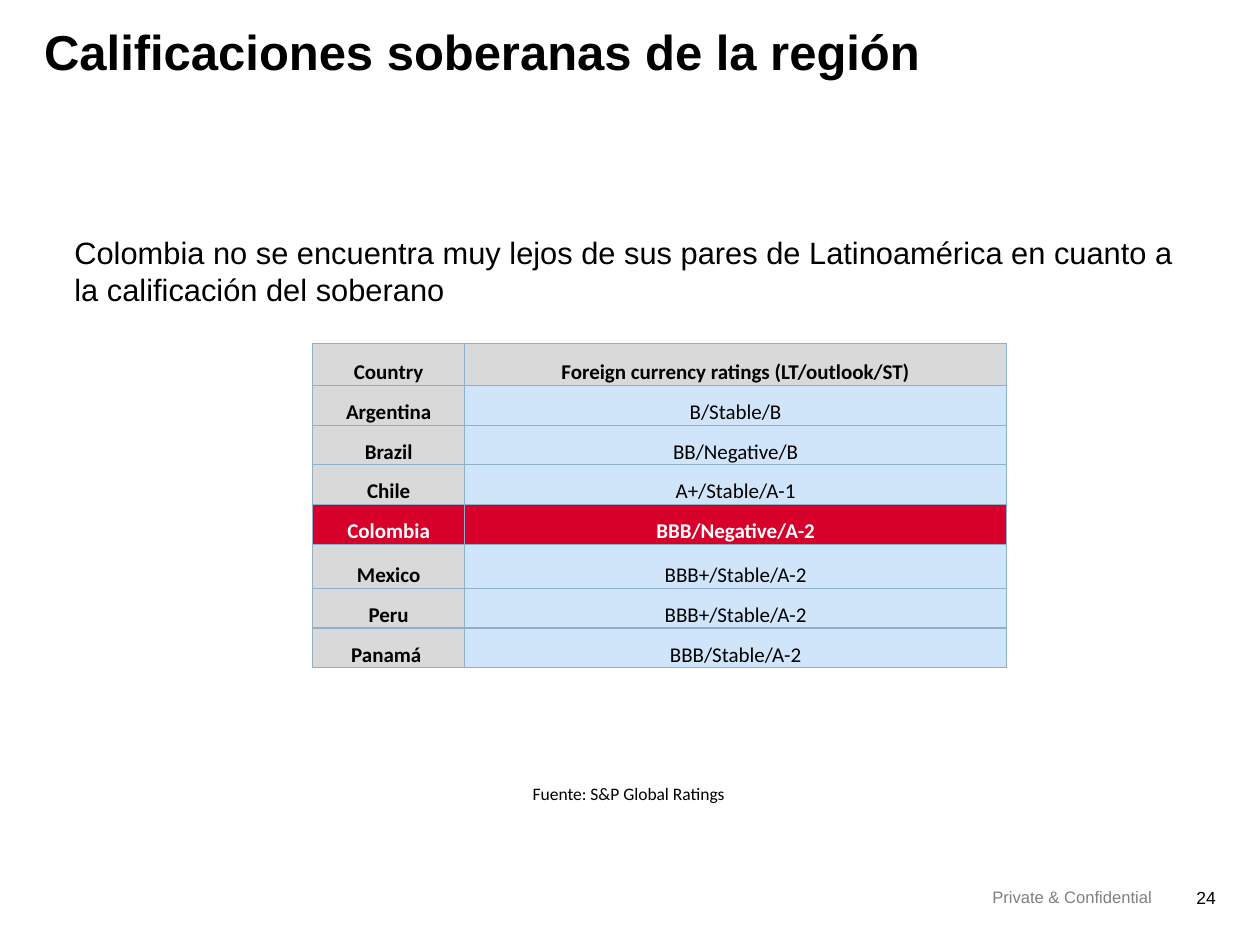
from lxml.etree import SubElement
from pptx import Presentation
from pptx.dml.color import RGBColor
from pptx.enum.text import MSO_ANCHOR as Anchor, PP_ALIGN as Align
from pptx.oxml.ns import qn
from pptx.util import Cm, Pt

COLORS = {
    "text": "000000",
    "footer": "808080",
    "label": "D9D9D9",
    "rating": "D0E5FA",
    "highlight": "D6002A",
    "inverse": "FFFFFF",
    "border": "90AFC9",
}
HEADER = ("Country", "Foreign currency ratings (LT/outlook/ST)")
RATINGS = [
    ("Argentina", "B/Stable/B"),
    ("Brazil", "BB/Negative/B"),
    ("Chile", "A+/Stable/A-1"),
    ("Colombia", "BBB/Negative/A-2"),
    ("Mexico", "BBB+/Stable/A-2"),
    ("Peru", "BBB+/Stable/A-2"),
    ("Panamá ", "BBB/Stable/A-2"),
]
COLUMN_WIDTHS = (3.07, 10.92)
ROW_HEIGHT = 0.8
TALL_ROWS = {"Country": 0.84, "Mexico": 0.89}


def rgb(name):
    return RGBColor.from_string(COLORS[name])


def add_span(para, text, size, font="Arial", color="text", bold=False):
    span = para.add_run()
    span.text = text
    span.font.size = Pt(size)
    span.font.name = font
    span.font.bold = bold
    span.font.color.rgb = rgb(color)


def set_margins(target, left, top, right, bottom):
    target.margin_left, target.margin_top = Cm(left), Cm(top)
    target.margin_right, target.margin_bottom = Cm(right), Cm(bottom)


def add_title(page, text):
    title = page.shapes.title
    title.left, title.top, title.width, title.height = Cm(0.89), Cm(0.61), Cm(22.56), Cm(2.21)
    frame = title.text_frame
    frame.word_wrap = True
    frame.vertical_anchor = Anchor.TOP
    set_margins(frame, 0, 0, 0, 0)
    para = frame.paragraphs[0]
    para.alignment = Align.LEFT
    para.line_spacing = 0.85
    add_span(para, text, 28, bold=True)


def add_text(page, position, text, size, align=Align.LEFT, wrap=True, inset=(0, 0, 0, 0), **style):
    box = page.shapes.add_textbox(*map(Cm, position))
    frame = box.text_frame
    frame.word_wrap = wrap
    set_margins(frame, *inset)
    para = frame.paragraphs[0]
    para.alignment = align
    add_span(para, text, size, **style)


def add_borders(cell):
    properties = cell._tc.get_or_add_tcPr()
    for side in ("lnL", "lnR", "lnT", "lnB"):
        line = SubElement(properties, qn(f"a:{side}"), w=str(Pt(0.75)))
        fill = SubElement(line, qn("a:solidFill"))
        SubElement(fill, qn("a:srgbClr"), val=COLORS["border"])


def fill_cell(cell, text, fill, color, bold):
    add_borders(cell)
    cell.fill.solid()
    cell.fill.fore_color.rgb = rgb(fill)
    cell.vertical_anchor = Anchor.BOTTOM
    set_margins(cell, 0.02, 0.02, 0.02, 0)
    para = cell.text_frame.paragraphs[0]
    para.alignment = Align.CENTER
    add_span(para, text, 12, "Calibri", color, bold)


def add_ratings_table(page):
    rows = [HEADER, *RATINGS]
    heights = [TALL_ROWS.get(country, ROW_HEIGHT) for country, _ in rows]
    table = page.shapes.add_table(
        len(rows), len(HEADER), Cm(6.3), Cm(6.93), Cm(sum(COLUMN_WIDTHS)), Cm(sum(heights))
    ).table
    for column, width in zip(table.columns, COLUMN_WIDTHS):
        column.width = Cm(width)
    for index, (values, height) in enumerate(zip(rows, heights)):
        table.rows[index].height = Cm(height)
        highlighted = values[0] == "Colombia"
        for position, text in enumerate(values):
            label = index == 0 or position == 0
            fill = "highlight" if highlighted else "label" if label else "rating"
            color = "inverse" if highlighted else "text"
            fill_cell(table.cell(index, position), text, fill, color, label or highlighted)


def main():
    deck = Presentation()
    deck.slide_width, deck.slide_height = Cm(25.4), Cm(19.05)
    page = deck.slides.add_slide(deck.slide_layouts[5])
    add_title(page, "Calificaciones soberanas de la región")
    add_text(page, (15.09, 17.88, 8.13, 0.61), "Private & Confidential", 9.5,
             Align.RIGHT, color="footer")
    add_text(page, (23.93, 17.88, 0.58, 0.71), "24", 10, Align.RIGHT)
    add_ratings_table(page)
    add_text(page, (1.5, 4.72, 22.56, 1.22),
             "Colombia no se encuentra muy lejos de sus pares de Latinoamérica "
             "en cuanto a la calificación del soberano", 17.6)
    add_text(page, (10.49, 15.65, 4.45, 0.69), "Fuente: S&P Global Ratings", 10,
             wrap=False, inset=(0.25, 0.13, 0.25, 0.13), font="Calibri")
    deck.save("out.pptx")


if __name__ == "__main__":
    main()
